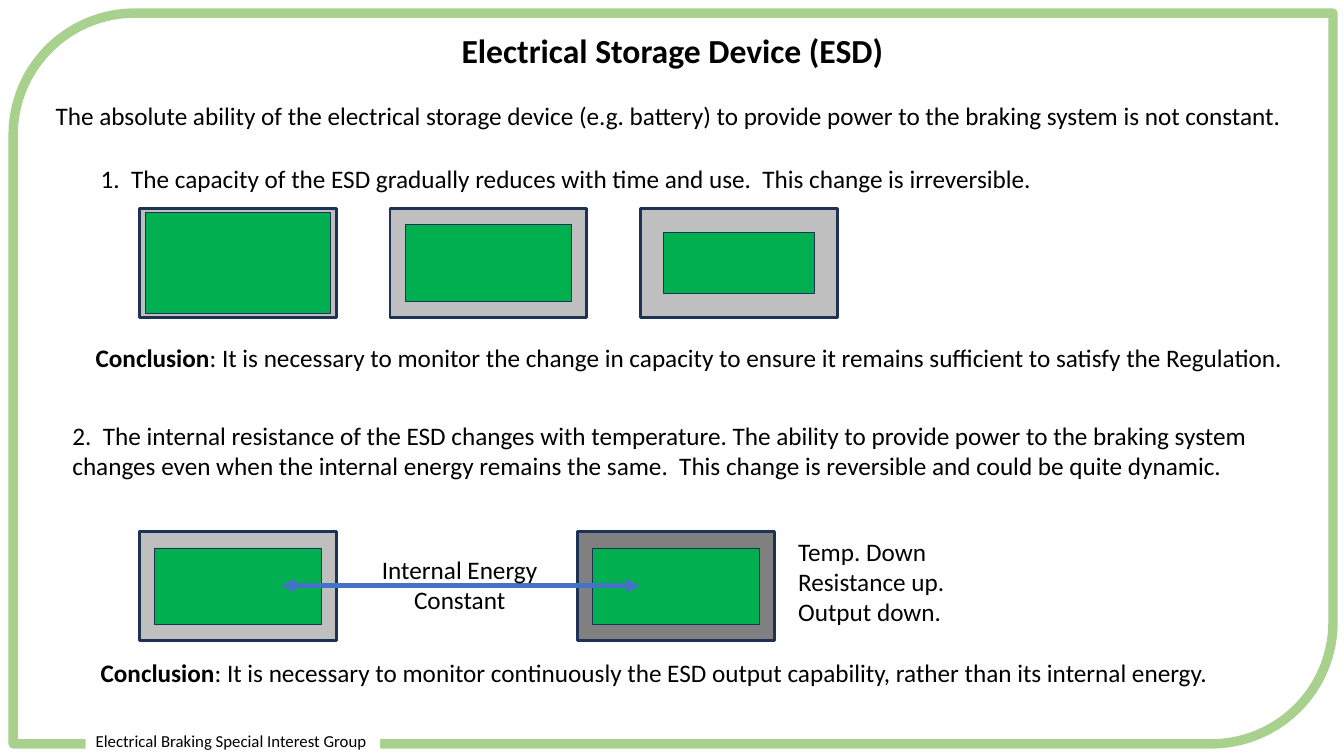
from dataclasses import dataclass

from lxml import etree
from pptx import Presentation
from pptx import util as u
from pptx.dml.color import RGBColor
from pptx.enum import shapes, text
from pptx.oxml import ns


@dataclass(frozen=True)
class Theme:
    font: str = "Calibri"
    ink: str = "000000"
    paper: str = "FFFFFF"
    frame: str = "A9D18E"
    edge: str = "1E3256"
    warm: str = "BFBFBF"
    cold: str = "808080"
    charge: str = "00B050"
    arrow: str = "4472C4"
    head: int = 24
    body: int = 18
    foot: int = 12


THEME = Theme()
WIDE, HIGH = u.Inches(13.33), u.Inches(7.5)
CELL = (14.65, 14.4)
FULL, USED, WORN = (13.73, 13.33), (12.38, 10.13), (11.25, 8)
LEFT, STEP = 10.37, 18.65
ROW = 5.33


def col(share):
    return round(WIDE * share / 100)


def row(share):
    return round(HIGH * share / 100)


def area(x, y, w, h):
    return col(x), row(y), col(w), row(h)


def rgb(code):
    return RGBColor.from_string(code)


def style(par, size, align=text.PP_ALIGN.LEFT):
    par.alignment = align
    for run in par.runs:
        run.font.name = THEME.font
        run.font.size = u.Pt(size)
        run.font.color.rgb = rgb(THEME.ink)


def add_text(slide, words, box, size=THEME.body, wrap=False,
             align=text.PP_ALIGN.LEFT):
    label = slide.shapes.add_textbox(*area(*box))
    frame = label.text_frame
    frame.word_wrap = wrap
    frame.text = words
    for par in frame.paragraphs:
        style(par, size, align)
    return label


def add_result(slide, words, box):
    par = add_text(slide, "Conclusion", box).text_frame.paragraphs[0]
    par.add_run().text = words
    style(par, THEME.body)
    par.runs[0].font.bold = True


def add_block(slide, kind, box, fill, line, width):
    block = slide.shapes.add_shape(kind, *area(*box))
    block.shadow.inherit = False
    if fill:
        block.fill.solid()
        block.fill.fore_color.rgb = rgb(fill)
    else:
        block.fill.background()
    block.line.color.rgb = rgb(line)
    block.line.width = u.Pt(width)


def add_cell(slide, x, y, core, shell=THEME.warm):
    kind = shapes.MSO_SHAPE.RECTANGLE
    inset = [(out - inner) / 2 for out, inner in zip(CELL, core)]
    add_block(slide, kind, (x, y, *CELL), shell, THEME.edge, 2)
    add_block(slide, kind, (x + inset[0], y + inset[1], *core),
              THEME.charge, THEME.edge, 0.5)


def add_arrow(slide, start, end, y):
    arrow = slide.shapes.add_connector(
        shapes.MSO_CONNECTOR.STRAIGHT, col(start), row(y), col(end), row(y))
    arrow.line.color.rgb = rgb(THEME.arrow)
    arrow.line.width = u.Pt(3.25)
    line = arrow.line._get_or_add_ln()
    for tip in ("a:headEnd", "a:tailEnd"):
        etree.SubElement(line, ns.qn(tip), type="triangle")
    etree.SubElement(arrow._element.spPr, ns.qn("a:effectLst"))


def add_title(slide, words, box):
    title = slide.shapes.title
    title.left, title.top, title.width, title.height = area(*box)
    frame = title.text_frame
    frame.text = words
    frame.vertical_anchor = text.MSO_ANCHOR.TOP
    frame.auto_size = text.MSO_AUTO_SIZE.NONE
    par = frame.paragraphs[0]
    style(par, THEME.head, text.PP_ALIGN.CENTER)
    par.line_spacing = 0.9
    par.runs[0].font.bold = True


def add_border(slide):
    add_block(slide, shapes.MSO_SHAPE.ROUND_2_DIAG_RECTANGLE,
              (0.98, 1.73, 98.2, 96.67), None, THEME.frame, 6.75)
    label = add_text(slide, "Electrical Braking Special Interest Group",
                     (6.38, 96, 21.9, 4), THEME.foot)
    label.fill.solid()
    label.fill.fore_color.rgb = rgb(THEME.paper)


def add_ageing(slide):
    add_text(slide, "1.  The capacity of the ESD gradually reduces with time "
             "and use.  This change is irreversible.", (6.75, 20.93, 71.65, ROW))
    for place, core in enumerate((FULL, USED, WORN)):
        add_cell(slide, LEFT + place * STEP, 27.6, core)
    add_result(slide, ": It is necessary to monitor the change in capacity to "
               "ensure it remains sufficient to satisfy the Regulation.",
               (6.38, 44.67, 90.75, ROW))


def add_cooling(slide):
    add_text(slide, "2.  The internal resistance of the ESD changes with "
             "temperature. The ability to provide power to the braking system "
             "changes even when the internal energy remains the same.  This "
             "change is reversible and could be quite dynamic.",
             (4.65, 54.93, 90.75, 9.47), wrap=True)
    add_cell(slide, LEFT, 70.35, USED)
    add_cell(slide, 42.97, 70.35, USED, THEME.cold)
    add_arrow(slide, 20.93, 47.63, 77.47)
    add_text(slide, "Internal Energy\nConstant", (27.6, 72.67, 13.2, 9.47),
             align=text.PP_ALIGN.CENTER)
    add_text(slide, "Temp. Down\nResistance up.\nOutput down.",
             (58.65, 70.27, 12.5, 13.47))
    add_result(slide, ": It is necessary to monitor continuously the ESD output "
               "capability, rather than its internal energy.",
               (6.75, 86.27, 86.5, ROW))


def main():
    deck = Presentation()
    deck.slide_width, deck.slide_height = WIDE, HIGH
    slide = deck.slides.add_slide(deck.slide_layouts[5])
    add_border(slide)
    add_title(slide, "Electrical Storage Device (ESD)",
              (6.9, 3.87, 86.27, 9.33))
    add_text(slide, "The absolute ability of the electrical storage device "
             "(e.g. battery) to provide power to the braking system is not "
             "constant.", (3.4, 12.67, 93.4, ROW))
    add_ageing(slide)
    add_cooling(slide)
    deck.save("out.pptx")


if __name__ == "__main__":
    main()
